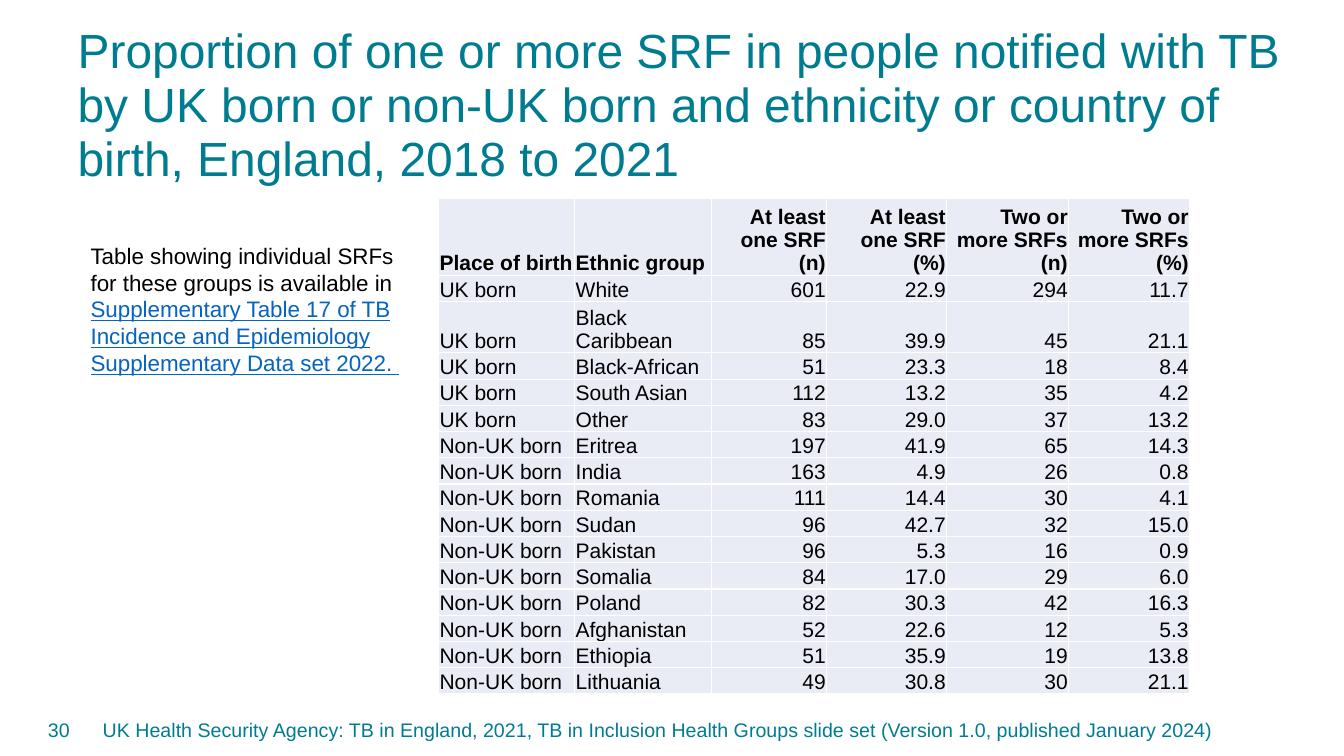
from lxml.etree import SubElement
from pptx import Presentation
from pptx.dml.color import RGBColor
from pptx.enum.text import MSO_ANCHOR, MSO_AUTO_SIZE, PP_ALIGN
from pptx.oxml.ns import qn
from pptx.util import Inches, Pt

COLOURS = {"teal": "007C91", "black": "000000", "link": "0563C1", "cell": "E9EBF5", "border": "FFFFFF"}

TITLE = ("Proportion of one or more SRF in people notified with TB by UK born or non-UK born "
         "and ethnicity or country of birth, England, 2018 to 2021")
NOTE = "Table showing individual SRFs for these groups is available in "
NOTE_LINK = "Supplementary Table 17 of TB Incidence and Epidemiology Supplementary Data set 2022. "
PAGE_NUMBER = "30"
FOOTER = ("UK Health Security Agency: TB in England, 2021, TB in Inclusion Health Groups "
          "slide set (Version 1.0, published January 2024)")

HEADINGS = ("Place of birth", "Ethnic group", "At least one SRF (n)", "At least one SRF (%)",
            "Two or more SRFs (n)", "Two or more SRFs (%)")
GROUPS = {
    "UK born": [
        ("White", "601", "22.9", "294", "11.7"),
        ("Black Caribbean", "85", "39.9", "45", "21.1"),
        ("Black-African", "51", "23.3", "18", "8.4"),
        ("South Asian", "112", "13.2", "35", "4.2"),
        ("Other", "83", "29.0", "37", "13.2"),
    ],
    "Non-UK born": [
        ("Eritrea", "197", "41.9", "65", "14.3"),
        ("India", "163", "4.9", "26", "0.8"),
        ("Romania", "111", "14.4", "30", "4.1"),
        ("Sudan", "96", "42.7", "32", "15.0"),
        ("Pakistan", "96", "5.3", "16", "0.9"),
        ("Somalia", "84", "17.0", "29", "6.0"),
        ("Poland", "82", "30.3", "42", "16.3"),
        ("Afghanistan", "52", "22.6", "12", "5.3"),
        ("Ethiopia", "51", "35.9", "19", "13.8"),
        ("Lithuania", "49", "30.8", "30", "21.1"),
    ],
}
COLUMN_WIDTHS = (1.35, 1.36, 1.14, 1.19, 1.21, 1.2)
HEADING_HEIGHT, ROW_HEIGHT = 0.54, 0.21
TEXT_COLUMNS = 2

FRAMES = {
    "title": (0.67, 0.2, 12.17, 1.06),
    "note": (0.8, 2.35, 3.31, 1.45),
    "number": (0.14, 7.04, 0.65, 0.4),
    "footer": (0.92, 7.04, 11.92, 0.4),
}
TABLE_CORNER = (4.35, 1.97)


def add_span(para, text, size, colour, **formats):
    span = para.add_run()
    span.text = text
    for name, value in {"name": "Arial", "size": Pt(size), **formats}.items():
        setattr(span.font, name, value)
    span.font.color.rgb = RGBColor.from_string(COLOURS[colour])


def add_box(page, frame, anchor=MSO_ANCHOR.TOP, align=PP_ALIGN.LEFT):
    box = page.shapes.add_textbox(*map(Inches, FRAMES[frame]))
    box.text_frame.word_wrap = True
    box.text_frame.vertical_anchor = anchor
    para = box.text_frame.paragraphs[0]
    para.alignment = align
    return para


def add_title(page):
    title = page.shapes.title
    for name, value in zip(("left", "top", "width", "height"), FRAMES["title"]):
        setattr(title, name, Inches(value))
    formats = {"word_wrap": True, "auto_size": MSO_AUTO_SIZE.NONE, "vertical_anchor": MSO_ANCHOR.TOP}
    for name, value in formats.items():
        setattr(title.text_frame, name, value)
    para = title.text_frame.paragraphs[0]
    para.alignment = PP_ALIGN.LEFT
    para.line_spacing = 0.94
    add_span(para, TITLE, 34.2, "teal")


def add_borders(cell):
    properties = cell._tc.get_or_add_tcPr()
    for position, side in enumerate(("lnL", "lnR", "lnT", "lnB")):
        line = properties.makeelement(qn(f"a:{side}"), {"w": str(Pt(1))})
        fill = SubElement(line, qn("a:solidFill"))
        SubElement(fill, qn("a:srgbClr"), val=COLOURS["border"])
        properties.insert(position, line)


def format_cell(cell, text, is_heading, is_number):
    formats = {"margin_left": Inches(0.01), "margin_right": Inches(0.01), "margin_top": Inches(0.01),
               "margin_bottom": 0, "vertical_anchor": MSO_ANCHOR.BOTTOM}
    for name, value in formats.items():
        setattr(cell, name, value)
    cell.fill.solid()
    cell.fill.fore_color.rgb = RGBColor.from_string(COLOURS["cell"])
    add_borders(cell)
    para = cell.text_frame.paragraphs[0]
    para.alignment = PP_ALIGN.RIGHT if is_number else PP_ALIGN.LEFT
    add_span(para, text, 15, "black", bold=is_heading)


def add_risk_table(page):
    rows = [HEADINGS] + [(birth, *values) for birth, lines in GROUPS.items() for values in lines]
    heights = [HEADING_HEIGHT] + [ROW_HEIGHT] * (len(rows) - 1)
    size = (sum(COLUMN_WIDTHS), sum(heights))
    table = page.shapes.add_table(len(rows), len(HEADINGS), *map(Inches, TABLE_CORNER + size)).table
    for column, width in zip(table.columns, COLUMN_WIDTHS):
        column.width = Inches(width)
    for row, height in zip(table.rows, heights):
        row.height = Inches(height)
    for row_index, values in enumerate(rows):
        for column_index, text in enumerate(values):
            format_cell(table.cell(row_index, column_index), text,
                        row_index == 0, column_index >= TEXT_COLUMNS)


def main():
    deck = Presentation()
    deck.slide_width, deck.slide_height = Inches(13.33), Inches(7.5)
    page = deck.slides.add_slide(deck.slide_layouts[5])
    add_span(add_box(page, "number", MSO_ANCHOR.MIDDLE, PP_ALIGN.RIGHT), PAGE_NUMBER, 14, "teal")
    add_span(add_box(page, "footer", MSO_ANCHOR.MIDDLE), FOOTER, 14, "teal")
    add_title(page)
    add_risk_table(page)
    note = add_box(page, "note")
    add_span(note, NOTE, 16, "black")
    add_span(note, NOTE_LINK, 16, "link", underline=True)
    deck.save("out.pptx")


if __name__ == "__main__":
    main()
